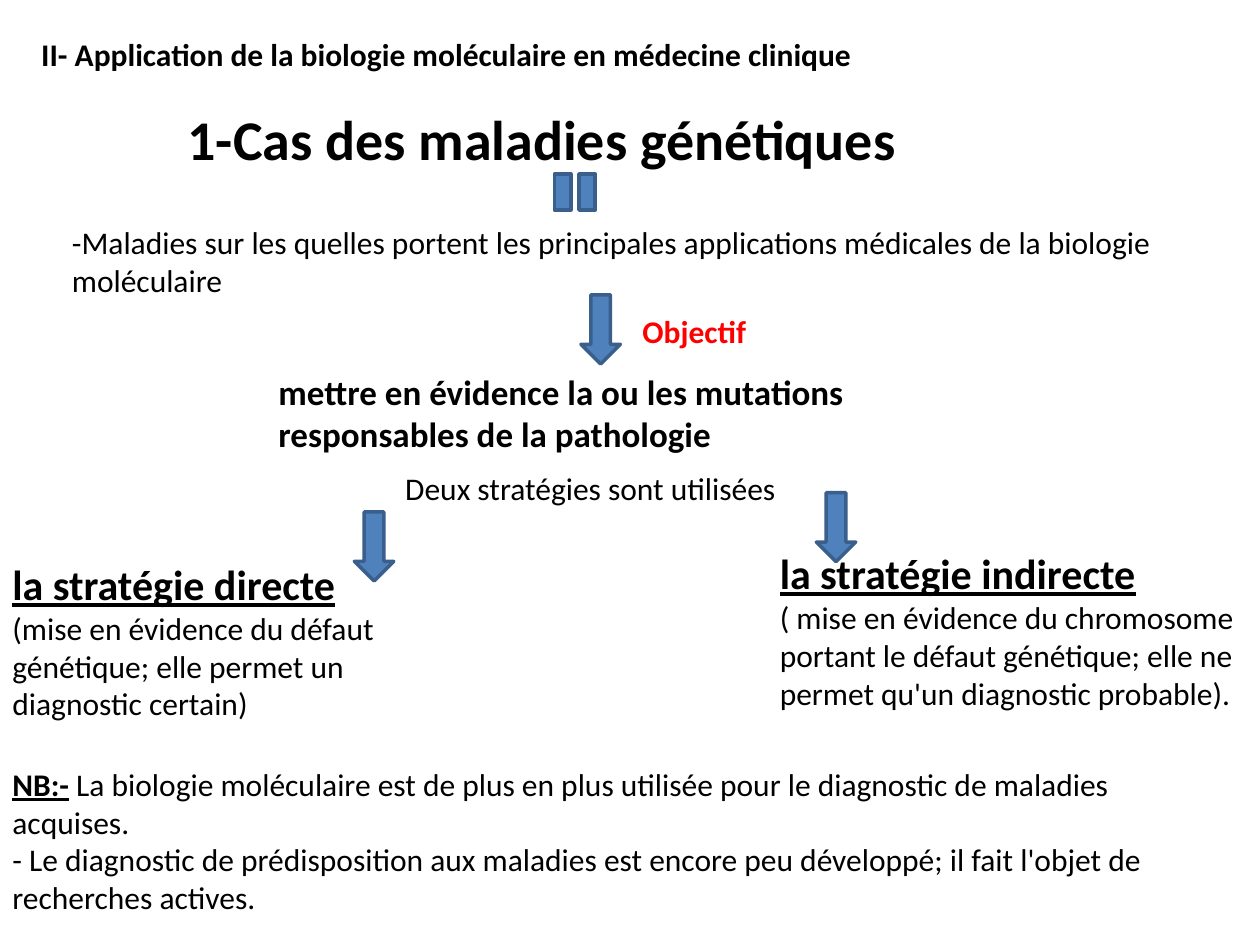
from pptx import Presentation
from pptx.dml.color import RGBColor
from pptx.enum.shapes import MSO_SHAPE
from pptx.enum.text import MSO_AUTO_SIZE
from pptx.util import Pt

DOWN_ARROW = MSO_SHAPE.DOWN_ARROW
EQUAL = MSO_SHAPE.MATH_EQUAL
FIT_SHAPE = MSO_AUTO_SIZE.SHAPE_TO_FIT_TEXT
FONT = "Calibri"
COLORS = {"text": "000000", "goal": "FF0000", "fill": "4F81BD", "line": "3A5F8C"}


def color(name):
    """Return the named colour."""
    return RGBColor.from_string(COLORS[name])


def add_text(page, frame, paragraphs, ink="text"):
    """Add a wrapped text box; each paragraph lists (text, size, bold, underline)."""
    box = page.shapes.add_textbox(*map(Pt, frame))
    text_frame = box.text_frame
    text_frame.word_wrap = True
    text_frame.auto_size = FIT_SHAPE
    for index, spans in enumerate(paragraphs):
        para = text_frame.add_paragraph() if index else text_frame.paragraphs[0]
        for text, size, bold, underline in spans:
            span = para.add_run()
            span.text = text
            span.font.name = FONT
            span.font.size = Pt(size)
            span.font.bold = bold
            span.font.underline = underline
            span.font.color.rgb = color(ink)


def add_line(page, frame, text, size=18, bold=False, ink="text"):
    """Add a text box holding one uniform paragraph."""
    add_text(page, frame, [[(text, size, bold, False)]], ink)


def add_strategy(page, frame, name, description):
    """Add an underlined strategy name with its description below."""
    add_text(page, frame, [[(name, 24, True, True)], [(description, 18, False, False)]])


def add_symbol(page, kind, left, top, width=22.5, rotation=0):
    """Add a blue outlined symbol."""
    symbol = page.shapes.add_shape(kind, Pt(left), Pt(top), Pt(width), Pt(39.5))
    symbol.rotation = rotation
    symbol.shadow.inherit = False
    symbol.fill.solid()
    symbol.fill.fore_color.rgb = color("fill")
    symbol.line.color.rgb = color("line")
    symbol.line.width = Pt(2)


def main():
    """Build the slide on genetic diseases."""
    deck = Presentation()
    deck.slide_width, deck.slide_height = Pt(720), Pt(540)
    page = deck.slides.add_slide(deck.slide_layouts[6])

    add_line(page, (16.5, 16.5, 585, 51),
             "II- Application de la biologie moléculaire en médecine clinique", bold=True)
    add_text(page, (96, 56, 444, 46), [[
        (" ", 18, True, False), ("1-Cas des maladies génétiques ", 32, True, False)]])
    add_line(page, (34, 124, 658, 51),
             "-Maladies sur les quelles portent les principales applications médicales "
             "de la biologie moléculaire")
    add_line(page, (152, 208, 433.5, 55.5),
             "mettre en évidence la ou les mutations responsables de la pathologie", 20, True)
    add_line(page, (360, 174.5, 106.5, 29), "Objectif", bold=True, ink="goal")
    add_line(page, (224.5, 264.5, 315.5, 29), "Deux stratégies sont utilisées")
    add_strategy(page, (0, 315.5, 264, 101.5), "la stratégie directe",
                 "(mise en évidence du défaut génétique; elle permet un diagnostic certain)")
    add_strategy(page, (438.5, 309.5, 281.5, 101.5), "la stratégie indirecte",
                 "( mise en évidence du chromosome portant le défaut génétique; "
                 "elle ne permet qu'un diagnostic probable).")
    add_text(page, (0, 433.5, 686, 94.5), [
        [("NB:-", 18, True, True),
         (" La biologie moléculaire est de plus en plus utilisée pour le diagnostic "
          "de maladies acquises.", 18, False, False)],
        [("- Le diagnostic de prédisposition aux maladies est encore peu développé; "
          "il fait l'objet de recherches actives.", 18, False, False)]])

    add_symbol(page, EQUAL, 314.5, 90, width=28, rotation=90)
    for left, top in ((332, 168.5), (466.5, 281.5), (202.5, 292.5)):
        add_symbol(page, DOWN_ARROW, left, top)

    deck.save("out.pptx")


if __name__ == "__main__":
    main()
